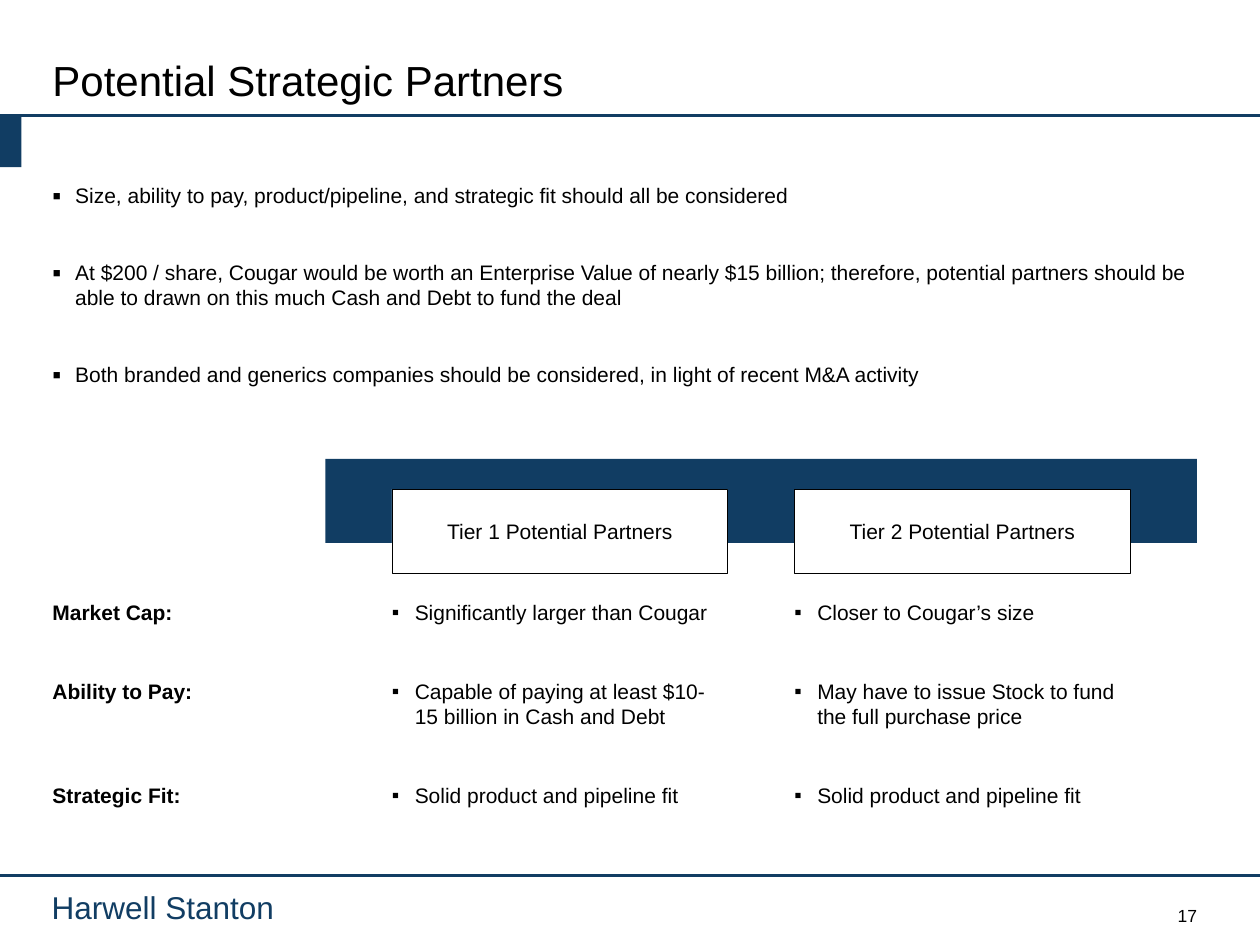
import pptx
import pptx.dml.color
import pptx.enum.shapes
import pptx.enum.text
import pptx.oxml.ns
import pptx.util
from lxml import etree

Pt = pptx.util.Pt
ALIGN = pptx.enum.text.PP_ALIGN
ANCHOR = pptx.enum.text.MSO_ANCHOR
COLOURS = {"navy": "113D63", "black": "000000", "white": "FFFFFF"}

SLIDE_WIDTH, SLIDE_HEIGHT = 720, 540
MARGIN = 30
RIGHT_EDGE = 684

POINTS = [
    "Size, ability to pay, product/pipeline, and strategic fit should all be considered",
    "At $200 / share, Cougar would be worth an Enterprise Value of nearly $15 billion; "
    "therefore, potential partners should be able to drawn on this much Cash and Debt to fund the deal",
    "Both branded and generics companies should be considered, in light of recent M&A activity",
]
TIERS = ["Tier 1 Potential Partners", "Tier 2 Potential Partners"]
# Criterion, row height, one entry per tier
CRITERIA = [
    ("Market Cap:", 21.5, ["Significantly larger than Cougar", "Closer to Cougar’s size"]),
    ("Ability to Pay:", 36, ["Capable of paying at least $10-15 billion in Cash and Debt",
                             "May have to issue Stock to fund the full purchase price"]),
    ("Strategic Fit:", 21.5, ["Solid product and pipeline fit"] * 2),
]


def colour(name):
    return pptx.dml.color.RGBColor.from_string(COLOURS[name])


def add_bullet(paragraph, size_percent):
    """Give the paragraph a square bullet with a hanging indent."""
    properties = paragraph._p.get_or_add_pPr()
    properties.set("marL", str(Pt(13)))
    properties.set("indent", str(-Pt(13)))
    for tag, name, value in (
        ("a:buSzPct", "val", str(size_percent * 1000)),
        ("a:buFont", "typeface", "Arial"),
        ("a:buChar", "char", "▪"),
    ):
        etree.SubElement(properties, pptx.oxml.ns.qn(tag)).set(name, value)


class SlideBuilder:
    font = "Arial"
    text_size = 12

    def __init__(self, slide):
        self.slide = slide

    def fill_frame(self, frame, texts, size=None, color="black", bold=False,
                   align=ALIGN.LEFT, bullet=None, gap=0):
        """Put one paragraph per text into the frame, gap points apart."""
        for index, text in enumerate(texts):
            paragraph = frame.add_paragraph() if index else frame.paragraphs[0]
            paragraph.text = text
            paragraph.alignment = align
            if index < len(texts) - 1:
                paragraph.space_after = Pt(gap)
            if bullet:
                add_bullet(paragraph, bullet)
            paragraph.font.name = self.font
            paragraph.font.size = Pt(size or self.text_size)
            paragraph.font.bold = bold
            paragraph.font.color.rgb = colour(color)

    def text(self, left, top, width, height, texts, inset=3.6, anchor=ANCHOR.TOP, **style):
        box = self.slide.shapes.add_textbox(Pt(left), Pt(top), Pt(width), Pt(height))
        frame = box.text_frame
        frame.word_wrap = True
        frame.vertical_anchor = anchor
        frame.margin_left = frame.margin_right = 0
        frame.margin_top = frame.margin_bottom = Pt(inset)
        self.fill_frame(frame, texts, **style)

    def rectangle(self, left, top, width, height, fill, line=None, label=None):
        shape = self.slide.shapes.add_shape(
            pptx.enum.shapes.MSO_SHAPE.RECTANGLE, Pt(left), Pt(top), Pt(width), Pt(height))
        shape.shadow.inherit = False
        shape.fill.solid()
        shape.fill.fore_color.rgb = colour(fill)
        if line:
            shape.line.color.rgb = colour(line)
            shape.line.width = Pt(0.5)
        else:
            shape.line.fill.background()
        if label:
            shape.text_frame.vertical_anchor = ANCHOR.MIDDLE
            self.fill_frame(shape.text_frame, [label], align=ALIGN.CENTER)

    def rule(self, top):
        """Draw a horizontal line across the whole slide."""
        line = self.slide.shapes.add_connector(
            pptx.enum.shapes.MSO_CONNECTOR.STRAIGHT, 0, Pt(top), Pt(SLIDE_WIDTH), Pt(top))
        line.line.color.rgb = colour("navy")
        line.line.width = Pt(1.75)
        etree.SubElement(line._element.spPr, pptx.oxml.ns.qn("a:effectLst"))


def main():
    presentation = pptx.Presentation()
    presentation.slide_width = Pt(SLIDE_WIDTH)
    presentation.slide_height = Pt(SLIDE_HEIGHT)
    builder = SlideBuilder(presentation.slides.add_slide(presentation.slide_layouts[6]))

    header_top = 66
    builder.rule(header_top)
    builder.rectangle(0, header_top, 12.25, 29.5, "navy")
    builder.rule(500.5)
    builder.text(29.5, 507.5, 180, 21.5, ["Harwell Stanton"], inset=0, size=18, color="navy")
    builder.text(RIGHT_EDGE - 168, 517, 168, 12, ["17"], inset=0, size=10,
                 anchor=ANCHOR.BOTTOM, align=ALIGN.RIGHT)

    content_width = RIGHT_EDGE - MARGIN
    builder.text(MARGIN, 31, content_width, 29, ["Potential Strategic Partners"],
                 inset=0, size=24, anchor=ANCHOR.MIDDLE)
    builder.text(MARGIN, 101, content_width, 126, POINTS, bullet=120, gap=29.5)

    band_left, band_top, band_height = 186, 262.25, 48
    band_width = RIGHT_EDGE - band_left
    tier_width = 192
    tier_gap = (band_width - len(TIERS) * tier_width) / (len(TIERS) + 1)
    tier_lefts = [band_left + tier_gap + index * (tier_width + tier_gap)
                  for index in range(len(TIERS))]
    builder.rectangle(band_left, band_top, band_width, band_height, "navy")
    for left, tier in zip(tier_lefts, TIERS):
        builder.rectangle(left, band_top + 17.25, tier_width, band_height, "white", "black", tier)

    row_top, row_gap = 339, 23.5
    for criterion, height, entries in CRITERIA:
        builder.text(MARGIN, row_top, 126, height, [criterion], bold=True)
        for left, entry in zip(tier_lefts, entries):
            builder.text(left, row_top, tier_width, height, [entry], bullet=100)
        row_top += height + row_gap

    presentation.save("out.pptx")


if __name__ == "__main__":
    main()
